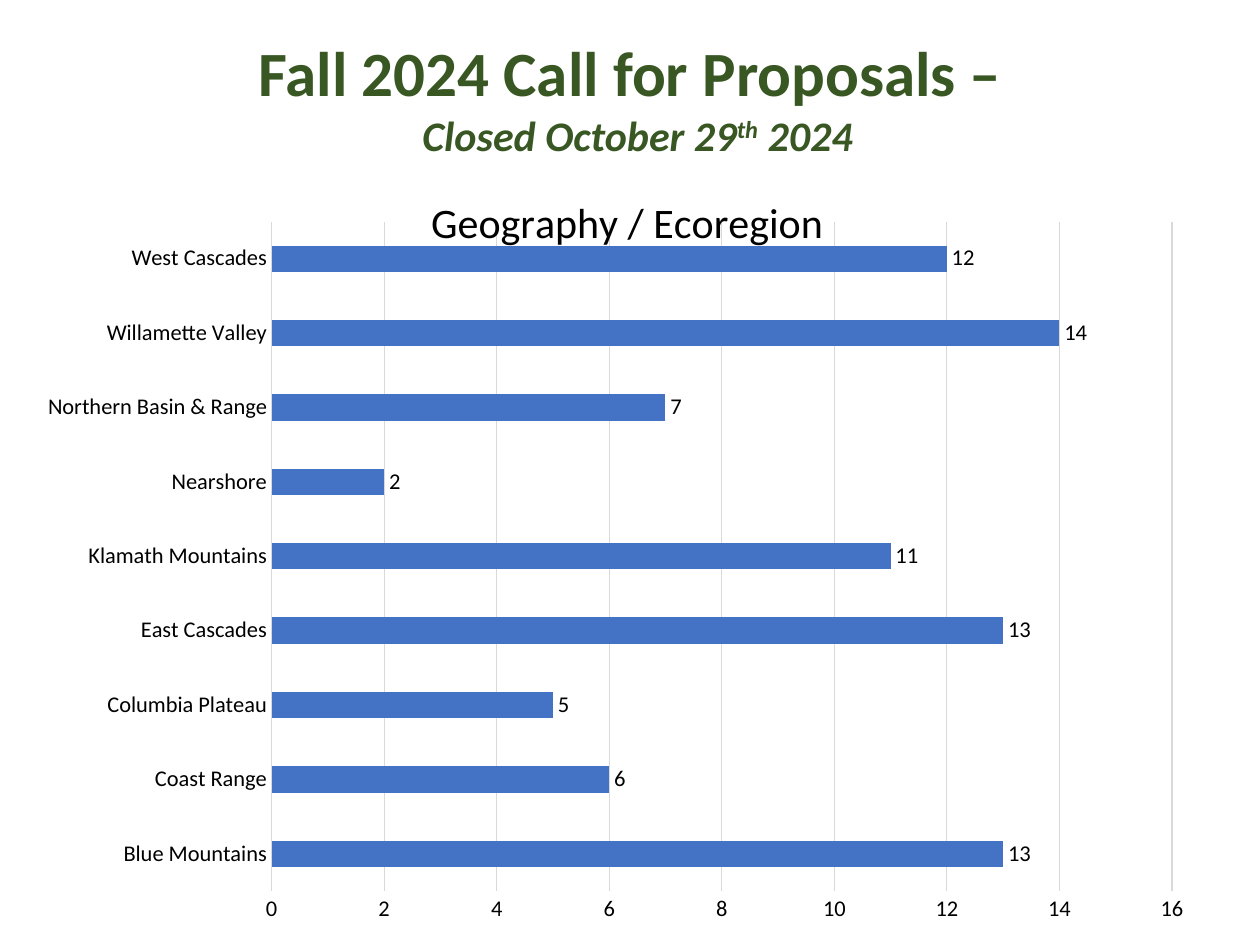
import pptx
import pptx.chart.data
import pptx.dml.color
import pptx.enum.chart
import pptx.enum.text
import pptx.util
from lxml import etree
from pptx.util import Inches, Pt

# Content
HEADING = "Fall 2024 Call for Proposals – "
CLOSING_DATE = [("Closed October 29", 0), ("th", 30000), (" 2024", 0)]  # text, baseline
CHART_TITLE = "Geography / Ecoregion"
PROPOSALS = [
    ("Blue Mountains", 13),
    ("Coast Range", 6),
    ("Columbia Plateau", 5),
    ("East Cascades", 13),
    ("Klamath Mountains", 11),
    ("Nearshore", 2),
    ("Northern Basin & Range", 7),
    ("Willamette Valley", 14),
    ("West Cascades", 12),
]

THEME = {
    "font": "Calibri",
    "green": "385723", "blue": "4472C4", "grid": "D9D9D9", "black": "000000",
    "heading": 36, "subheading": 24, "chart title": 24, "axis": 12.8, "label": 12.9,
}


def color(name):
    return pptx.dml.color.RGBColor.from_string(THEME[name])


def style(font, size, tint, bold=False, italic=False):
    font.name = THEME["font"]
    font.size = Pt(THEME[size])
    font.color.rgb = color(tint)
    font.bold = bold
    font.italic = italic


def set_layout(parent, target, **places):
    """Put a manual layout, in fractions of the chart, into a plot area or title."""
    for old in parent.findall(pptx.oxml.ns.qn("c:layout")):
        parent.remove(old)
    layout = etree.Element(pptx.oxml.ns.qn("c:layout"))
    manual = etree.SubElement(layout, pptx.oxml.ns.qn("c:manualLayout"))
    settings = {"layoutTarget": target} if target else {}
    settings.update(xMode="edge", yMode="edge", **places)
    for tag, value in settings.items():
        etree.SubElement(manual, pptx.oxml.ns.qn("c:" + tag)).set("val", str(value))
    parent.insert(1 if parent.find(pptx.oxml.ns.qn("c:tx")) is not None else 0, layout)


def add_heading(slide):
    box = slide.shapes.add_textbox(Inches(0.42), Inches(0.22), Inches(9.28), Inches(1.11))
    frame = box.text_frame
    frame.word_wrap = True
    heading = frame.paragraphs[0]
    heading.text = HEADING
    style(heading.font, "heading", "green", bold=True)
    closing = frame.add_paragraph()
    style(closing.font, "subheading", "green", bold=True, italic=True)
    for text, baseline in CLOSING_DATE:
        run = closing.add_run()
        run.text = text
        if baseline:
            run.font._element.set("baseline", str(baseline))
    for line in frame.paragraphs:
        line.alignment = pptx.enum.text.PP_ALIGN.CENTER


def add_region_chart(slide):
    data = pptx.chart.data.CategoryChartData()
    data.categories = [region for region, _ in PROPOSALS]
    data.add_series("Series 1", [count for _, count in PROPOSALS])
    chart = slide.shapes.add_chart(
        pptx.enum.chart.XL_CHART_TYPE.BAR_CLUSTERED,
        Inches(0.3), Inches(1.1), Inches(9.28), Inches(6.34), data).chart
    chart.has_legend = False
    chart.font.name = THEME["font"]
    chart.font.size = Pt(10)

    # Title over the top of the plot
    chart.has_title = True
    title = chart.chart_title
    title.include_in_layout = True
    title.text_frame.text = CHART_TITLE
    style(title.text_frame.paragraphs[0].font, "chart title", "black")
    set_layout(title._element, None, x=0.33, y=0.06)
    set_layout(chart._chartSpace.chart.plotArea, "inner", x=0.2, y=0.104, w=0.77, h=0.838)

    # Axes
    regions, counts = chart.category_axis, chart.value_axis
    for axis in (regions, counts):
        axis.major_tick_mark = axis.minor_tick_mark = pptx.enum.chart.XL_TICK_MARK.NONE
        style(axis.tick_labels.font, "axis", "black")
    counts.minimum_scale, counts.maximum_scale, counts.major_unit = 0, 16, 2
    counts.format.line.fill.background()
    regions.has_major_gridlines = False
    counts.has_major_gridlines = True
    for line in (regions.format.line, counts.major_gridlines.format.line):
        line.color.rgb = color("grid")
        line.width = Pt(0.75)

    # Bars and their values
    plot = chart.plots[0]
    plot.gap_width = 182
    plot.vary_by_categories = False
    bars = plot.series[0]
    bars.format.fill.solid()
    bars.format.fill.fore_color.rgb = color("blue")
    labels = bars.data_labels
    labels.show_value = True
    labels.position = pptx.enum.chart.XL_LABEL_POSITION.OUTSIDE_END
    style(labels.font, "label", "black")


def main():
    deck = pptx.Presentation()
    deck.slide_width, deck.slide_height = Inches(10), Inches(7.5)
    slide = deck.slides.add_slide(deck.slide_layouts[6])
    add_heading(slide)
    add_region_chart(slide)
    deck.save("out.pptx")


if __name__ == "__main__":
    main()
